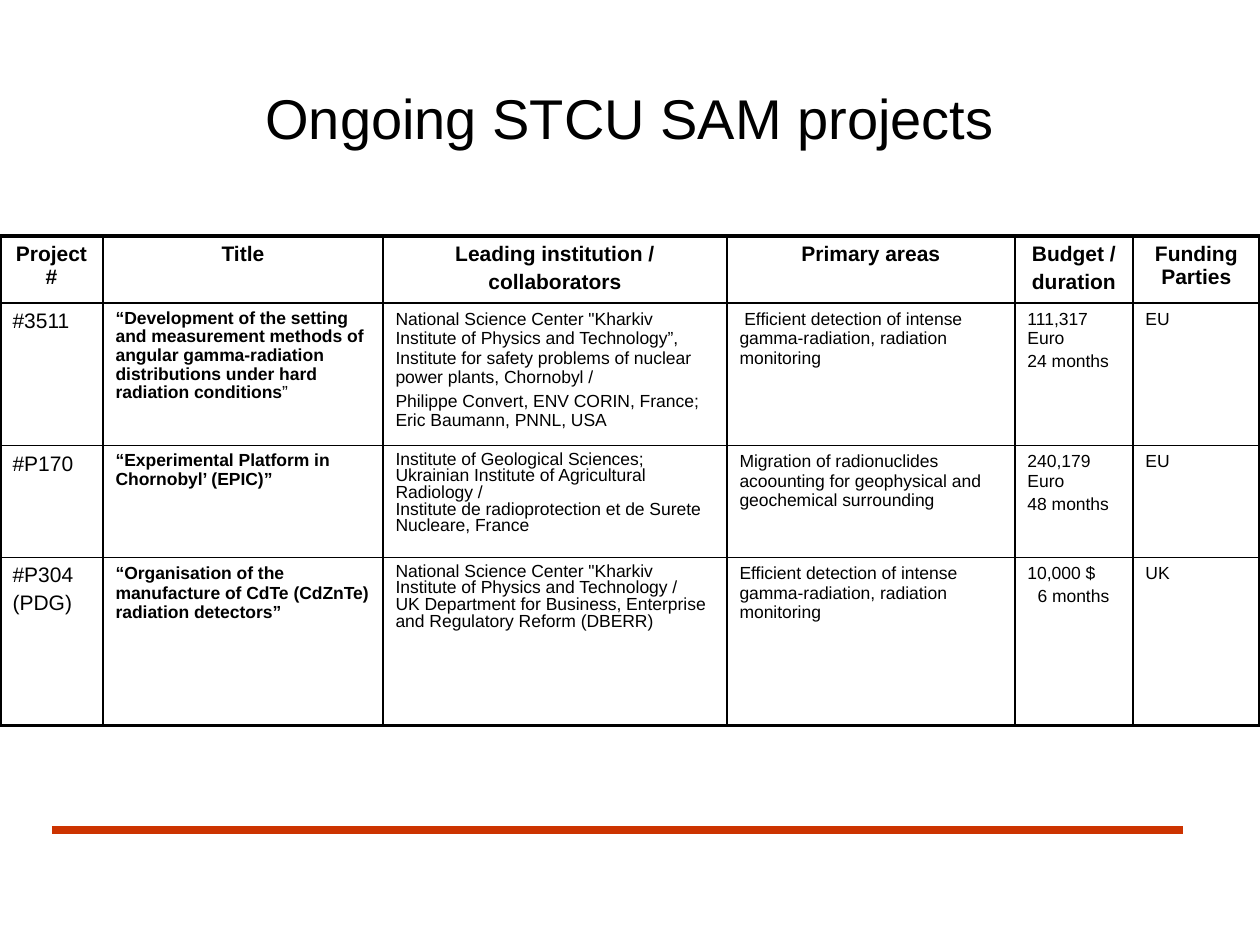
import pptx
import pptx.dml.color
import pptx.enum.shapes
import pptx.enum.text
import pptx.oxml.ns
import pptx.util
from lxml import etree

PX = 914400 // 126
LEFT = pptx.enum.text.PP_ALIGN.LEFT
CENTER = pptx.enum.text.PP_ALIGN.CENTER
MIDDLE = pptx.enum.text.MSO_ANCHOR.MIDDLE
BLACK = "000000"


def color(value):
    return pptx.dml.color.RGBColor.from_string(value)


def write_text(frame, text, size=10, bold=False, align=LEFT, line_spacing=None, gap=0):
    """Write each line of text as a paragraph, with gap points between them."""
    frame.word_wrap = True
    for index, line in enumerate(text.split("\n")):
        paragraph = frame.paragraphs[0] if index == 0 else frame.add_paragraph()
        paragraph.alignment = align
        if line_spacing:
            paragraph.line_spacing = line_spacing
        if index:
            paragraph.space_before = pptx.util.Pt(gap)
        run = paragraph.add_run()
        run.text = line
        run.font.name = "Arial"
        run.font.size = pptx.util.Pt(size)
        run.font.bold = bold
        run.font.color.rgb = color(BLACK)


presentation = pptx.Presentation()
presentation.slide_width = 1260 * PX
presentation.slide_height = 945 * PX
slide = presentation.slides.add_slide(presentation.slide_layouts[6])

# Footer rule
rule = slide.shapes.add_connector(
    pptx.enum.shapes.MSO_CONNECTOR.STRAIGHT, 52 * PX, 830 * PX, 1183 * PX, 830 * PX)
rule.line.color.rgb = color("CC3300")
rule.line.width = pptx.util.Pt(4.5)
etree.SubElement(rule._element.spPr, pptx.oxml.ns.qn("a:effectLst"))

# Title
title = slide.shapes.add_textbox(63 * PX, 38 * PX, 1134 * PX, 158 * PX)
title.text_frame.vertical_anchor = MIDDLE
write_text(title.text_frame, "Ongoing STCU SAM projects", size=32, align=CENTER)

# Projects table
column_widths = [103, 280, 344, 288, 118, 127]
row_heights = [64, 134, 112, 168]
header = ["Project #", "Title", "Leading institution /\ncollaborators",
          "Primary areas", "Budget /\nduration", "Funding Parties"]
projects = [
    ["#3511",
     "“Development of the setting and measurement methods of angular "
     "gamma-radiation distributions under hard radiation conditions",
     "National Science Center \"Kharkiv Institute of Physics and Technology”, "
     "Institute for safety problems of nuclear power plants, Chornobyl /\n"
     "Philippe Convert, ENV CORIN, France; Eric Baumann, PNNL, USA",
     " Efficient detection of intense gamma-radiation, radiation monitoring",
     "111,317 Euro\n24 months", "EU"],
    ["#P170",
     "“Experimental Platform in Chornobyl’ (EPIC)”",
     "Institute of Geological Sciences; Ukrainian Institute of Agricultural Radiology /\n"
     "Institute de radioprotection et de Surete Nucleare, France",
     "Migration of radionuclides acoounting for geophysical and geochemical surrounding",
     "240,179 Euro\n48 months", "EU"],
    ["#P304\n(PDG)",
     "“Organisation of the manufacture of CdTe (CdZnTe) radiation detectors”",
     "National Science Center \"Kharkiv Institute of Physics and Technology /\n"
     "UK Department for Business, Enterprise and Regulatory Reform (DBERR)",
     "Efficient detection of intense gamma-radiation, radiation monitoring",
     "10,000 $\n6 months", "UK"],
]
tight_spacing = {(1, 1): 0.95, (2, 1): 0.95, (2, 2): 0.85, (3, 2): 0.85}

last_row = len(row_heights) - 1
last_column = len(column_widths) - 1
table = slide.shapes.add_table(
    len(row_heights), len(column_widths), 0, 236 * PX,
    sum(column_widths) * PX, sum(row_heights) * PX).table
table.first_row = False
table.horz_banding = False
for column, width in zip(table.columns, column_widths):
    column.width = width * PX
for row, height in zip(table.rows, row_heights):
    row.height = height * PX

for row_index, texts in enumerate([header] + projects):
    for column_index, text in enumerate(texts):
        cell = table.cell(row_index, column_index)
        is_header = row_index == 0
        large = is_header or column_index == 0
        spacing = tight_spacing.get((row_index, column_index))
        write_text(cell.text_frame, text, size=12 if large else 10,
                   bold=is_header or column_index == 1,
                   align=CENTER if is_header else LEFT, line_spacing=spacing,
                   gap=0 if spacing else 2.4 if large else 2)

        outer_edges = {"lnL": column_index == 0, "lnR": column_index == last_column,
                       "lnT": row_index == 0, "lnB": row_index == last_row}
        properties = cell._tc.get_or_add_tcPr()
        for edge, is_outer in outer_edges.items():
            width = pptx.util.Pt(2.25 if is_outer else 1)
            border = etree.SubElement(properties, pptx.oxml.ns.qn("a:" + edge), w=str(width))
            fill = etree.SubElement(border, pptx.oxml.ns.qn("a:solidFill"))
            etree.SubElement(fill, pptx.oxml.ns.qn("a:srgbClr"), val=BLACK)
        cell.fill.background()

# The first project title closes with a quote mark in regular weight
closing_quote = table.cell(1, 1).text_frame.paragraphs[0].add_run()
closing_quote.text = "”"
closing_quote.font.name = "Arial"
closing_quote.font.size = pptx.util.Pt(10)
closing_quote.font.bold = False
closing_quote.font.color.rgb = color(BLACK)

# The single-digit duration is indented to line up with the others
short_duration = table.cell(3, 4).text_frame.paragraphs[1]
short_duration._p.get_or_add_pPr().set("marL", str(10 * PX))

presentation.save("out.pptx")
